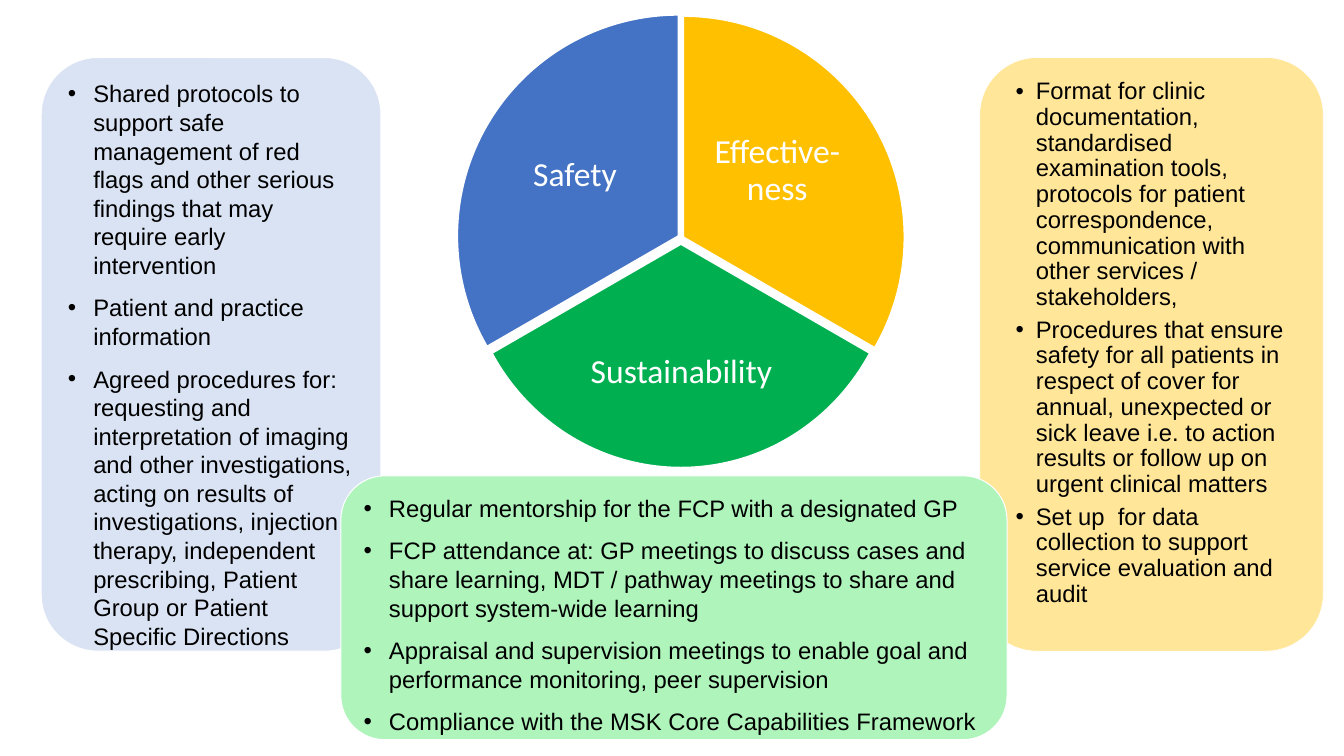
from lxml import etree
from pptx import Presentation
from pptx.dml.color import RGBColor
from pptx.enum.shapes import MSO_SHAPE
from pptx.enum.text import MSO_ANCHOR, MSO_AUTO_SIZE, PP_ALIGN
from pptx.oxml.ns import qn
from pptx.util import Cm, Pt

ROUNDED = MSO_SHAPE.ROUNDED_RECTANGLE
PIE = MSO_SHAPE.PIE
TOP, MIDDLE = MSO_ANCHOR.TOP, MSO_ANCHOR.MIDDLE
LEFT, CENTER = PP_ALIGN.LEFT, PP_ALIGN.CENTER
NO_FIT = MSO_AUTO_SIZE.NONE

BLACK = RGBColor(0x00, 0x00, 0x00)
WHITE = RGBColor(0xFF, 0xFF, 0xFF)
BLUE = RGBColor(0x44, 0x72, 0xC4)
GOLD = RGBColor(0xFF, 0xC0, 0x00)
GREEN = RGBColor(0x00, 0xB0, 0x50)
PALE_BLUE = RGBColor(0xDA, 0xE3, 0xF3)
PALE_GOLD = RGBColor(0xFF, 0xE6, 0x99)
PALE_GREEN = RGBColor(0xAE, 0xF4, 0xBB)

SAFETY = [
    "Shared protocols to support safe management of red flags and other serious findings that may require early intervention",
    "Patient and practice information",
    "Agreed procedures for: requesting and interpretation of imaging and other investigations, acting on results of "
    "investigations, injection therapy, independent prescribing, Patient Group or Patient Specific Directions",
]
EFFECTIVENESS = [
    "Format for clinic documentation, standardised examination tools, protocols for patient correspondence, "
    "communication with other services / stakeholders,",
    "Procedures that ensure safety for all patients in respect of cover for annual, unexpected or sick leave "
    "i.e. to action results or follow up on urgent clinical matters",
    "Set up  for data collection to support service evaluation and audit",
]
SUSTAINABILITY = [
    "Regular mentorship for the FCP with a designated GP",
    "FCP attendance at: GP meetings to discuss cases and share learning, MDT / pathway meetings to share and "
    "support system-wide learning",
    "Appraisal and supervision meetings to enable goal and performance monitoring, peer supervision",
    "Compliance with the MSK Core Capabilities Framework",
]


class SlideBuilder:
    body_font, body_size = "Arial", Pt(17)
    label_font, label_size = "Calibri", Pt(24)

    def __init__(self, slide):
        self.s = slide
        self.wheel = None

    def paint(self, sp, fill, line_width):
        sp.fill.solid()
        sp.fill.fore_color.rgb = fill
        sp.line.color.rgb = WHITE
        sp.line.width = Pt(line_width)

    def bullets(self, sp, items, margin=0.64, hanging=0.64, before=10, spacing=1.0, level=0):
        tf = sp.text_frame
        tf.word_wrap = True
        tf.auto_size = NO_FIT
        tf.vertical_anchor = TOP
        tf.text = "\n".join(items)
        for i, p in enumerate(tf.paragraphs):
            p.level = level
            p.alignment = LEFT
            p.line_spacing = spacing
            p.space_before = Pt(before if i else 0)
            pPr = p._p.get_or_add_pPr()
            pPr.set("marL", str(Cm(margin)))
            pPr.set("indent", str(-Cm(hanging)))
            etree.SubElement(pPr, qn("a:buFont")).set("typeface", self.body_font)
            etree.SubElement(pPr, qn("a:buChar")).set("char", "•")
            for r in p.runs:
                r.font.name = self.body_font
                r.font.size = self.body_size
                r.font.color.rgb = BLACK

    def body_panel(self, idx, box, fill, line_width, items, **style):
        sp = self.s.placeholders[idx]
        sp.left, sp.top, sp.width, sp.height = [Cm(v) for v in box]
        geom = etree.SubElement(sp._element.spPr, qn("a:prstGeom"))
        geom.set("prst", "roundRect")
        etree.SubElement(geom, qn("a:avLst"))
        self.paint(sp, fill, line_width)
        self.bullets(sp, items, **style)

    def panel(self, box, fill, line_width, items):
        sp = self.s.shapes.add_shape(ROUNDED, *[Cm(v) for v in box])
        sp.shadow.inherit = False
        self.paint(sp, fill, line_width)
        self.bullets(sp, items)

    def slice(self, box, start, end, fill, text, label_box):
        if self.wheel is None:
            self.wheel = self.s.shapes.add_group_shape()
        sp = self.wheel.shapes.add_shape(PIE, *[Cm(v) for v in box])
        sp.shadow.inherit = False
        sp.adjustments[0] = start * 0.6
        sp.adjustments[1] = end * 0.6
        self.paint(sp, fill, 1)
        self.label(text, label_box)

    def label(self, text, box):
        tf = self.wheel.shapes.add_textbox(*[Cm(v) for v in box]).text_frame
        tf.word_wrap = True
        tf.vertical_anchor = MIDDLE
        tf.margin_left = tf.margin_right = tf.margin_top = tf.margin_bottom = Cm(0.08)
        tf.text = text
        p = tf.paragraphs[0]
        p.alignment = CENTER
        p.line_spacing = 0.9
        font = p.runs[0].font
        font.name = self.label_font
        font.size = self.label_size
        font.color.rgb = WHITE


def main():
    prs = Presentation()
    prs.slide_width, prs.slide_height = Cm(33.87), Cm(19.05)
    s = prs.slides.add_slide(prs.slide_layouts[3])
    title = s.shapes.title._element
    title.getparent().remove(title)

    b = SlideBuilder(s)
    b.body_panel(1, (1.04, 1.45, 8.56, 14.96), PALE_BLUE, 0.75, SAFETY)
    b.body_panel(2, (24.69, 1.45, 8.66, 14.96), PALE_GOLD, 0.5, EFFECTIVENESS,
                 margin=0.74, hanging=0.51, before=5, spacing=0.9, level=1)
    b.panel((8.59, 11.99, 16.79, 6.65), PALE_GREEN, 0.75, SUSTAINABILITY)

    b.slice((11.66, 0.41, 11.13, 11.13), 270, 30, GOLD, "Effective-ness", (17.7, 2.46, 3.78, 3.71))
    b.slice((11.71, 0.53, 10.9, 11.25), 30, 150, GREEN, "Sustainability", (14.71, 7.65, 4.93, 3.48))
    b.slice((11.53, 0.38, 11.13, 11.13), 150, 270, BLUE, "Safety", (12.6, 2.57, 3.78, 3.71))
    prs.save("out.pptx")


if __name__ == "__main__":
    main()
